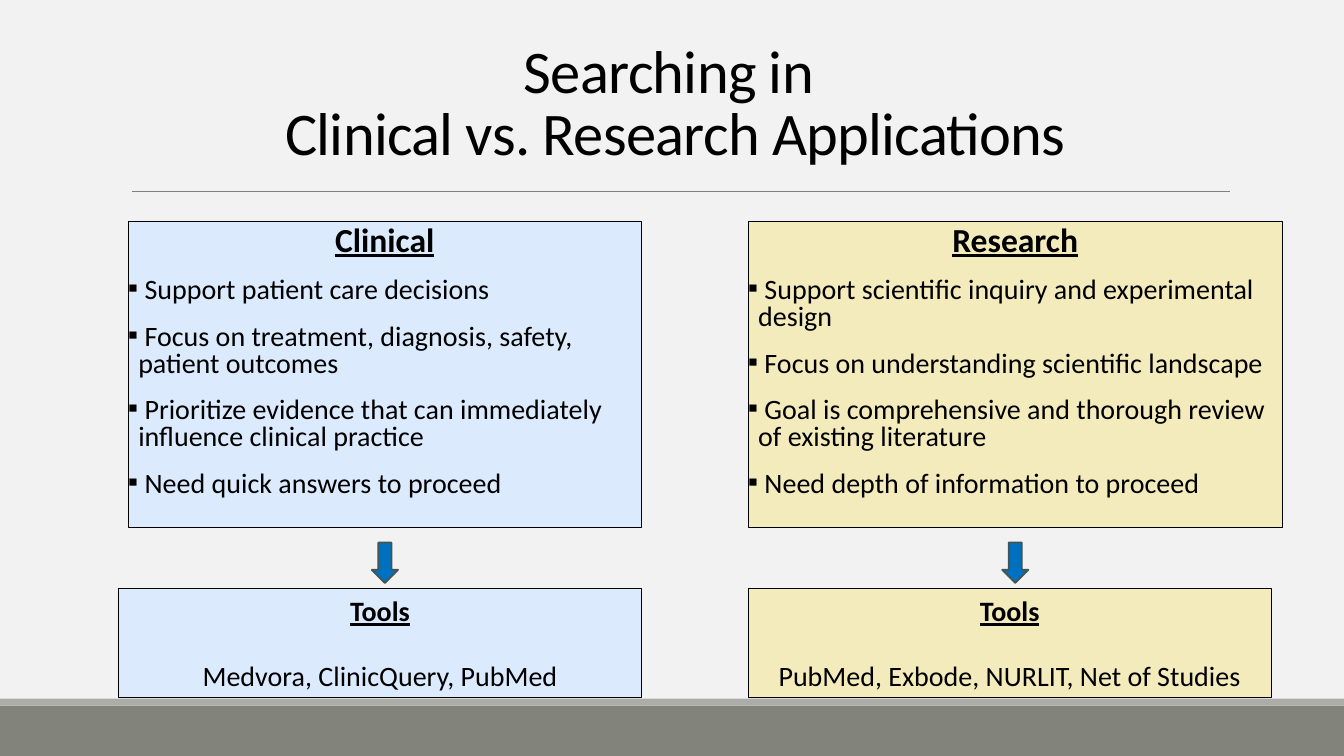
from dataclasses import dataclass

from lxml.etree import SubElement
from pptx import Presentation
from pptx.dml.color import RGBColor
from pptx.enum.shapes import MSO_CONNECTOR as Connector, MSO_SHAPE as Shape
from pptx.enum.text import MSO_ANCHOR as Anchor, PP_ALIGN as Align
from pptx.oxml.ns import qn
from pptx.util import Pt


@dataclass(frozen=True)
class Theme:
    font: str = "Calibri"
    background: str = "F2F2F2"
    ink: str = "000000"
    rule: str = "808080"
    footer: str = "82847C"
    footer_edge: str = "ACADA8"
    clinical: str = "DCEAFE"
    research: str = "F4EBBD"
    arrow: str = "0070C0"
    arrow_line: str = "455453"
    title_size: float = 43.2
    heading_size: float = 24
    body_size: float = 20


theme = Theme()


def add_box(kind, left, top, width, height, fill, line=None, line_width=0.75):
    shape = slide.shapes.add_shape(kind, Pt(left), Pt(top), Pt(width), Pt(height))
    shape.shadow.inherit = False
    shape.fill.solid()
    shape.fill.fore_color.rgb = RGBColor.from_string(fill)
    if line:
        shape.line.color.rgb = RGBColor.from_string(line)
        shape.line.width = Pt(line_width)
    else:
        shape.line.fill.background()
    return shape


def write(frame, text, size=theme.body_size, heading=False, bullet=False,
          align=Align.CENTER, spacing=None, before=0, after=0, tracking=0):
    """Fill the empty first paragraph, or add another one below."""
    first = not frame.text
    paragraph = frame.paragraphs[0] if first else frame.add_paragraph()
    paragraph.text = text
    if bullet:
        properties = paragraph._p.get_or_add_pPr()
        properties.set("marL", str(Pt(7.2)))
        properties.set("indent", str(-Pt(7.2)))
        SubElement(properties, qn("a:buFont")).set("typeface", theme.font)
        SubElement(properties, qn("a:buChar")).set("char", "▪")
    paragraph.alignment = align
    paragraph.space_before = Pt(0 if first else before)
    paragraph.space_after = Pt(after)
    if spacing:
        paragraph.line_spacing = spacing
    for run in paragraph.runs:
        run.font.name = theme.font
        run.font.size = Pt(size)
        run.font.bold = run.font.underline = heading
        run.font.color.rgb = RGBColor.from_string(theme.ink)
        if tracking:
            run._r.get_or_add_rPr().set("spc", str(round(tracking * 100)))


presentation = Presentation()
presentation.slide_width = Pt(960)
presentation.slide_height = Pt(540)
slide = presentation.slides.add_slide(presentation.slide_layouts[6])
slide.background.fill.solid()
slide.background.fill.fore_color.rgb = RGBColor.from_string(theme.background)

# Footer bands
add_box(Shape.RECTANGLE, 0, 504, 960, 36, theme.footer)
add_box(Shape.RECTANGLE, 0, 499, 960, 5, theme.footer_edge)

# Title and rule
title = slide.shapes.add_textbox(Pt(86.4), Pt(22.3), Pt(792), Pt(100.8)).text_frame
title.word_wrap = True
title.vertical_anchor = Anchor.BOTTOM
write(title, "Searching in \nClinical vs. Research Applications",
      size=theme.title_size, spacing=0.85, tracking=-0.5)

rule = slide.shapes.add_connector(Connector.STRAIGHT, Pt(94.3), Pt(136.6), Pt(878.8), Pt(136.6))
rule.line.color.rgb = RGBColor.from_string(theme.rule)
rule.line.width = Pt(0.5)
SubElement(rule._element.spPr, qn("a:effectLst"))

# Columns: heading, fill, points left and width, arrow left, tools left, points, tools
columns = [
    ("Clinical", theme.clinical, 91.6, 366.7, 265.6, 84.6,
     ["Support patient care decisions",
      "Focus on treatment, diagnosis, safety, patient outcomes",
      "Prioritize evidence that can immediately influence clinical practice",
      "Need quick answers to proceed"],
     "Medvora, ClinicQuery, PubMed"),
    ("Research", theme.research, 534.4, 381.6, 715.9, 534.4,
     ["Support scientific inquiry and experimental design",
      "Focus on understanding scientific landscape",
      "Goal is comprehensive and thorough review of existing literature",
      "Need depth of information to proceed"],
     "PubMed, Exbode, NURLIT, Net of Studies"),
]
for heading, fill, left, width, arrow_left, tools_left, points, tools in columns:
    # Points
    frame = add_box(Shape.RECTANGLE, left, 158.2, width, 218.4, fill, theme.ink).text_frame
    frame.word_wrap = True
    frame.vertical_anchor = Anchor.TOP
    frame.margin_left = frame.margin_right = 0
    write(frame, heading, size=theme.heading_size, heading=True, spacing=0.8, after=2)
    for point in points:
        write(frame, " " + point, bullet=True, align=Align.LEFT,
              spacing=0.8, before=12, after=2)

    # Tools
    frame = add_box(Shape.RECTANGLE, tools_left, 420.5, 373.7, 77.8, fill, theme.ink).text_frame
    frame.word_wrap = True
    frame.vertical_anchor = Anchor.TOP
    write(frame, "Tools", heading=True)
    write(frame, tools, before=22)

    # Arrow from points to tools
    add_box(Shape.DOWN_ARROW, arrow_left, 387.6, 18.7, 28.8,
            theme.arrow, theme.arrow_line, 1.25)

presentation.save("out.pptx")
